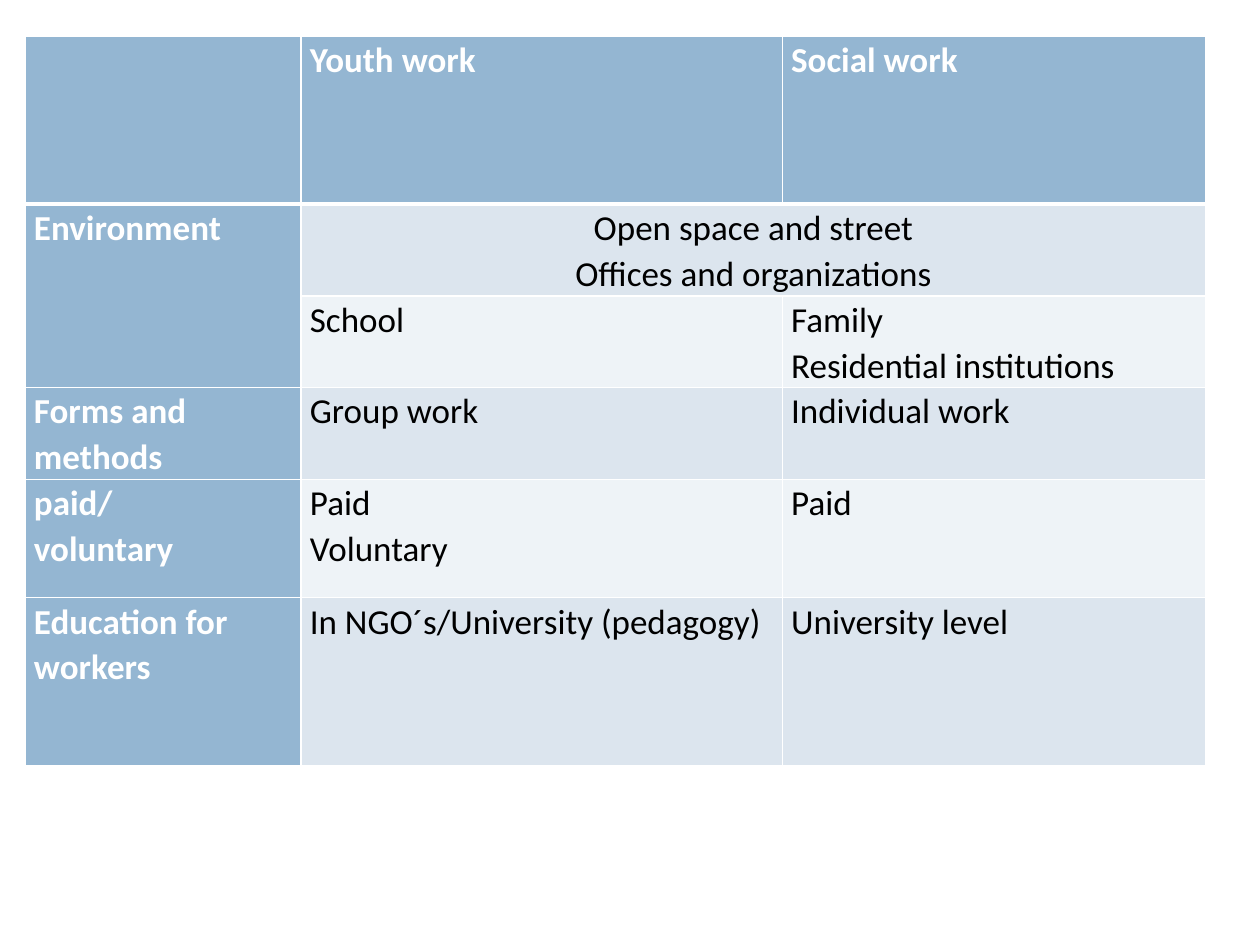
"""Build a slide that compares youth work with social work in a table."""
from dataclasses import dataclass

from lxml.etree import SubElement
from pptx import Presentation
from pptx.dml.color import RGBColor
from pptx.enum.text import PP_ALIGN
from pptx.oxml.ns import qn
from pptx.slide import Slide
from pptx.table import Table, _Cell
from pptx.util import Inches, Pt

COLORS = {"head": "94B6D2", "dark": "DCE5EE", "light": "EEF3F7",
          "white": "FFFFFF", "black": "000000"}
COLUMN_WIDTHS = (2.19, 3.82, 3.36)
ROW_HEIGHTS = (1.33, 0.72, 0.71, 0.71, 0.94, 1.33)
TABLE_LEFT, TABLE_TOP = 0.2, 0.29


@dataclass(frozen=True)
class Entry:
    """A block of text at a grid position, with the cells it spans."""
    row: int
    column: int
    lines: tuple[str, ...]
    rows: int = 1
    columns: int = 1


ENTRIES = (
    Entry(0, 1, ("Youth work",)),
    Entry(0, 2, ("Social work",)),
    Entry(1, 0, ("Environment",), rows=2),
    Entry(1, 1, ("Open space and street", "Offices and organizations"), columns=2),
    Entry(2, 1, ("School",)),
    Entry(2, 2, ("Family", "Residential institutions\u00a0")),
    Entry(3, 0, ("Forms and methods",)),
    Entry(3, 1, ("Group work",)),
    Entry(3, 2, ("Individual work",)),
    Entry(4, 0, ("paid/", "voluntary")),
    Entry(4, 1, ("Paid", "Voluntary")),
    Entry(4, 2, ("Paid",)),
    Entry(5, 0, ("Education for workers",)),
    Entry(5, 1, ("In NGO´s/University (pedagogy)",)),
    Entry(5, 2, ("University level",)),
)


def is_heading(row: int, column: int) -> bool:
    """Tell whether a grid position lies in the heading row or column."""
    return row == 0 or column == 0


def draw_borders(cell: _Cell, *, bottom: float) -> None:
    """Give a cell white borders, with its own width at the bottom."""
    properties = cell._tc.get_or_add_tcPr()
    widths = {"lnL": 1, "lnR": 1, "lnT": 1, "lnB": bottom}
    for position, (side, width) in enumerate(widths.items()):
        line = SubElement(properties, qn(f"a:{side}"), w=str(Pt(width)))
        fill = SubElement(line, qn("a:solidFill"))
        SubElement(fill, qn("a:srgbClr"), val=COLORS["white"])
        properties.insert(position, line)


def style_cell(cell: _Cell, row: int, column: int) -> None:
    """Set the fill, margins and borders that follow from the position."""
    band = "dark" if row % 2 else "light"
    if row == len(ROW_HEIGHTS) - 1:
        band = "dark"
    color = COLORS["head" if is_heading(row, column) else band]
    cell.fill.solid()
    cell.fill.fore_color.rgb = RGBColor.from_string(color)
    cell.margin_left = cell.margin_right = Inches(0.07)
    cell.margin_top = cell.margin_bottom = 0
    draw_borders(cell, bottom=3 if row == 0 else 1)


def write_text(cell: _Cell, lines: tuple[str, ...], *, color: str,
               bold: bool, align: PP_ALIGN) -> None:
    """Write one paragraph per line with a shared format."""
    cell.text = "\n".join(lines)
    for para in cell.text_frame.paragraphs:
        para.alignment = align
        para.line_spacing = 1.07
        for span in para.runs:
            span.font.name = "Calibri"
            span.font.size = Pt(20)
            span.font.bold = bold
            span.font.color.rgb = RGBColor.from_string(COLORS[color])


def place_entry(table: Table, entry: Entry) -> None:
    """Merge the cells of an entry where needed and write its text."""
    cell = table.cell(entry.row, entry.column)
    if entry.rows > 1 or entry.columns > 1:
        cell.merge(table.cell(entry.row + entry.rows - 1,
                              entry.column + entry.columns - 1))
    heading = is_heading(entry.row, entry.column)
    write_text(cell, entry.lines, color="white" if heading else "black", bold=heading,
               align=PP_ALIGN.CENTER if entry.columns > 1 else PP_ALIGN.LEFT)


def draw_comparison(page: Slide) -> None:
    """Draw the comparison table on the page."""
    frame = page.shapes.add_table(
        len(ROW_HEIGHTS), len(COLUMN_WIDTHS), Inches(TABLE_LEFT), Inches(TABLE_TOP),
        Inches(sum(COLUMN_WIDTHS)), Inches(sum(ROW_HEIGHTS)))
    table = frame.table
    for column, width in zip(table.columns, COLUMN_WIDTHS):
        column.width = Inches(width)
    for row, height in zip(table.rows, ROW_HEIGHTS):
        row.height = Inches(height)
    for row in range(len(ROW_HEIGHTS)):
        for column in range(len(COLUMN_WIDTHS)):
            style_cell(table.cell(row, column), row, column)
    for entry in ENTRIES:
        place_entry(table, entry)


def main() -> None:
    """Create the deck and save it."""
    deck = Presentation()
    deck.slide_width, deck.slide_height = Inches(10), Inches(7.5)
    draw_comparison(deck.slides.add_slide(deck.slide_layouts[6]))
    deck.save("out.pptx")


if __name__ == "__main__":
    main()
